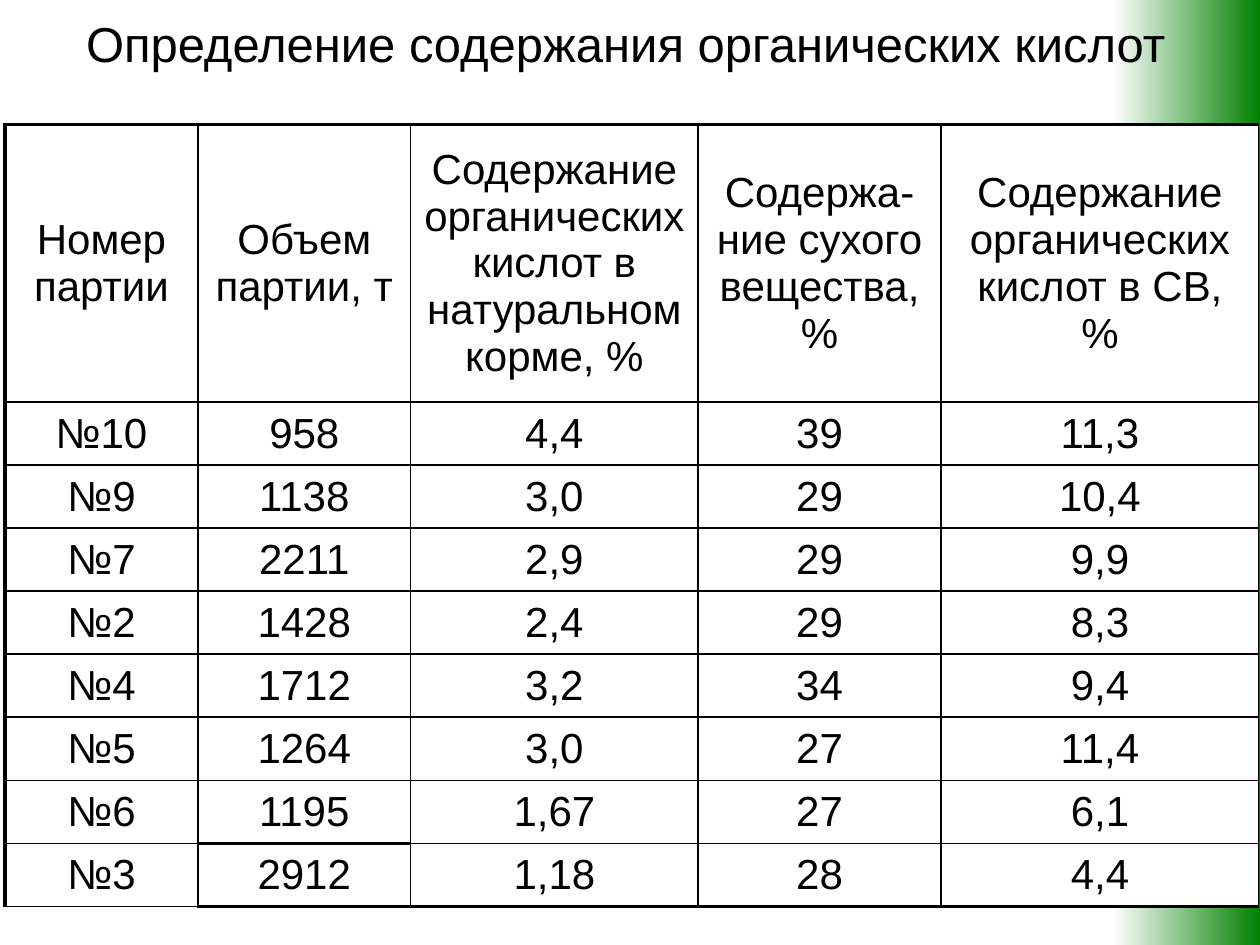
from dataclasses import dataclass

from lxml.etree import SubElement
from pptx import Presentation
from pptx.dml.color import RGBColor
from pptx.enum.shapes import MSO_SHAPE
from pptx.enum.text import MSO_ANCHOR, PP_ALIGN
from pptx.oxml.ns import qn
from pptx.util import Inches, Pt


@dataclass(frozen=True)
class Theme:
    font: str = "Arial"
    title_size: float = 28
    table_size: float = 24
    thin: float = 1
    thick: float = 2.25
    ink: str = "000000"
    paper: str = "FFFFFF"
    accent: str = "008000"


HEADERS = [
    "Номер партии",
    "Объем партии, т",
    "Содержание органических кислот в натуральном корме, %",
    "Содержа-ние сухого вещества, %",
    "Содержание органических кислот в СВ, %",
]
BATCHES = [
    ["№10", "958", "4,4", "39", "11,3"],
    ["№9", "1138", "3,0", "29", "10,4"],
    ["№7", "2211", "2,9", "29", "9,9"],
    ["№2", "1428", "2,4", "29", "8,3"],
    ["№4", "1712", "3,2", "34", "9,4"],
    ["№5", "1264", "3,0", "27", "11,4"],
    ["№6", "1195", "1,67", "27", "6,1"],
    ["№3", "2912", "1,18", "28", "4,4"],
]
COL_WIDTHS = [1.53, 1.69, 2.28, 1.93, 2.52]
HEADER_HEIGHT, ROW_HEIGHT = 2.2, 0.47


class SlideBuilder:
    def __init__(self, slide, theme):
        self.s, self.theme = slide, theme

    def centered_text(self, tf, text, size):
        p = tf.paragraphs[0]
        p.alignment = PP_ALIGN.CENTER
        r = p.add_run()
        r.text = text
        formats = {"name": self.theme.font, "size": Pt(size), "bold": False}
        for name, value in formats.items():
            setattr(r.font, name, value)
        r.font.color.rgb = RGBColor.from_string(self.theme.ink)

    def gradient_band(self, x, y, w, h):
        sp = self.s.shapes.add_shape(
            MSO_SHAPE.RECTANGLE, Inches(x), Inches(y), Inches(w), Inches(h))
        sp.shadow.inherit = False
        sp.line.fill.background()
        sp.fill.gradient()
        sp.fill.gradient_angle = 0
        colors = (self.theme.paper, self.theme.accent)
        for stop, position, color in zip(sp.fill.gradient_stops, (0, 1), colors):
            stop.position = position
            stop.color.rgb = RGBColor.from_string(color)

    def title(self, text, x, y, w, h):
        sp = self.s.shapes.add_textbox(Inches(x), Inches(y), Inches(w), Inches(h))
        tf = sp.text_frame
        for name, value in {"word_wrap": True, "vertical_anchor": MSO_ANCHOR.MIDDLE}.items():
            setattr(tf, name, value)
        self.centered_text(tf, text, self.theme.title_size)

    def borders(self, cell, thick_sides):
        tc_pr = cell._tc.get_or_add_tcPr()
        for side in "LRTB":
            width = self.theme.thick if side in thick_sides else self.theme.thin
            ln = SubElement(tc_pr, qn(f"a:ln{side}"), w=str(Pt(width)))
            fill = SubElement(ln, qn("a:solidFill"))
            SubElement(fill, qn("a:srgbClr"), val=self.theme.ink)

    def table(self, rows, widths, heights, thick_sides, x, y):
        table = self.s.shapes.add_table(
            len(rows), len(widths), Inches(x), Inches(y),
            Inches(sum(widths)), Inches(sum(heights))).table
        table.first_row = table.horz_banding = False
        for column, width in zip(table.columns, widths):
            column.width = Inches(width)
        for i, (row, height) in enumerate(zip(rows, heights)):
            table.rows[i].height = Inches(height)
            for j, text in enumerate(row):
                cell = table.cell(i, j)
                cell.vertical_anchor = MSO_ANCHOR.MIDDLE
                self.borders(cell, thick_sides(i, j))
                cell.fill.solid()
                cell.fill.fore_color.rgb = RGBColor.from_string(self.theme.paper)
                self.centered_text(cell.text_frame, text, self.theme.table_size)


def thick_sides(row, col):
    """Heavy outer frame, plus a heavy line above the last batch volume."""
    last = len(BATCHES)
    sides = "L" if col == 0 else ""
    if row == 0 or (row, col) == (last, 1):
        sides += "T"
    if (row == last and col > 0) or (row, col) == (last - 1, 1):
        sides += "B"
    return sides


def main():
    prs = Presentation()
    prs.slide_width, prs.slide_height = Inches(10), Inches(7.5)
    slide = SlideBuilder(prs.slides.add_slide(prs.slide_layouts[6]), Theme())

    # Background band
    slide.gradient_band(8.83, 0, 1.17, 7.5)

    # Title
    slide.title("Определение содержания органических кислот", 0.2, 0, 9.53, 0.68)

    # Batch table
    heights = [HEADER_HEIGHT] + [ROW_HEIGHT] * len(BATCHES)
    slide.table([HEADERS] + BATCHES, COL_WIDTHS, heights, thick_sides, 0.04, 0.99)

    prs.save("out.pptx")


if __name__ == "__main__":
    main()
